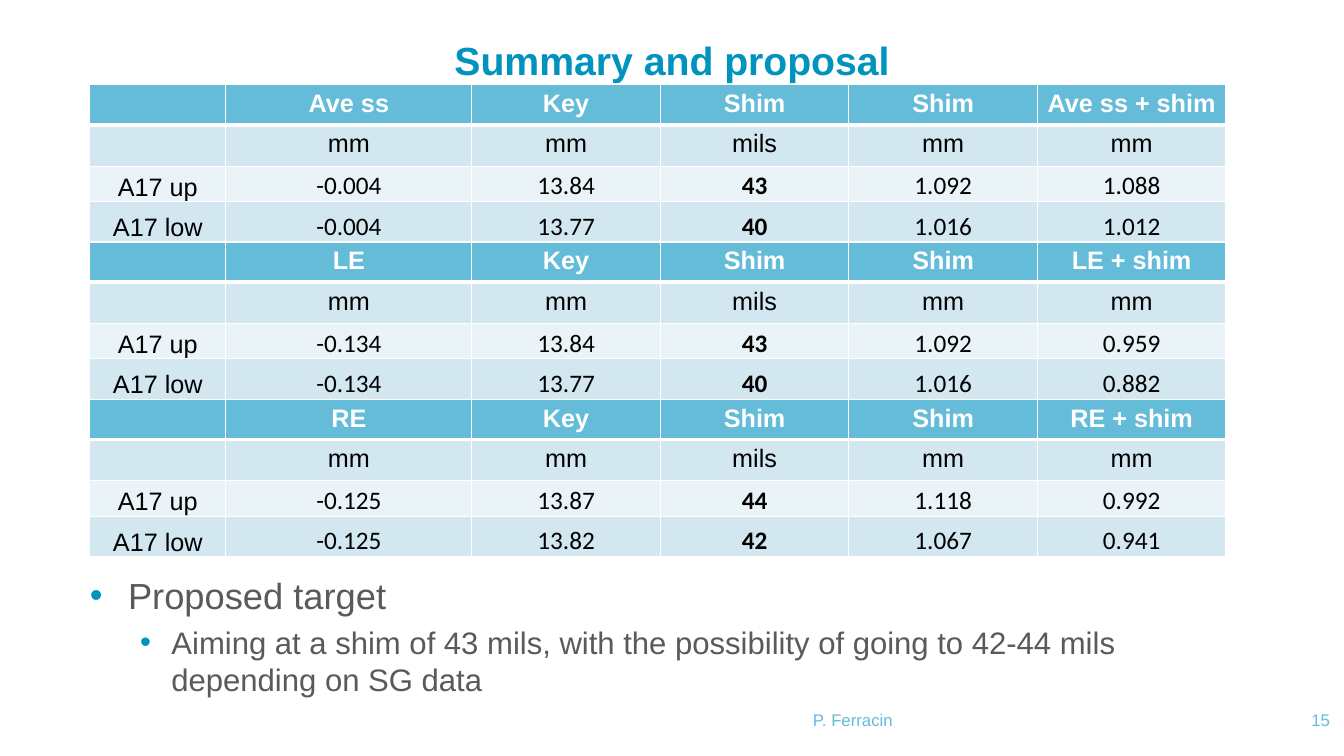
from lxml.etree import SubElement
from pptx import Presentation
from pptx.dml.color import RGBColor
from pptx.enum.text import MSO_ANCHOR, PP_ALIGN
from pptx.oxml.ns import qn
from pptx.util import Inches, Pt

BLUE, LIGHT_BLUE, GREY = "0093BE", "64BCD9", "5A5A5A"
BAND, PALE_BAND, WHITE, BLACK = "D3E7F1", "EAF3F8", "FFFFFF", "000000"


def color(hex_value):
    return RGBColor.from_string(hex_value)


def add_text(box, lines, size, hex_value, align, anchor, bold=False):
    """Add a text box without margins, one paragraph per line."""
    shape = slide.shapes.add_textbox(*[Inches(value) for value in box])
    frame = shape.text_frame
    frame.word_wrap = True
    frame.vertical_anchor = anchor
    frame.margin_left = frame.margin_right = frame.margin_top = frame.margin_bottom = 0
    frame.text = "\n".join(lines)
    for paragraph in frame.paragraphs:
        paragraph.alignment = align
        for run in paragraph.runs:
            run.font.name, run.font.size, run.font.bold = "Arial", Pt(size), bold
            run.font.color.rgb = color(hex_value)
    return frame


presentation = Presentation()
presentation.slide_width, presentation.slide_height = Inches(13.33), Inches(7.5)
slide = presentation.slides.add_slide(presentation.slide_layouts[6])

# Title
add_text((0.89, 0.2, 11.55, 0.79), ["Summary and proposal"], 28, BLUE,
         PP_ALIGN.CENTER, MSO_ANCHOR.MIDDLE, bold=True)

# Proposed target, two bullet levels
target = add_text(
    (0.89, 5.64, 11.55, 1.12),
    ["Proposed target",
     "Aiming at a shim of 43 mils, with the possibility of going to 42-44 mils "
     "depending on SG data"],
    25.9, GREY, PP_ALIGN.LEFT, MSO_ANCHOR.TOP)
target.margin_top = Inches(0.05)
for paragraph, indent, hanging in zip(target.paragraphs, (0.38, 0.81), (0.38, 0.31)):
    properties = paragraph._p.get_or_add_pPr()
    properties.set("marL", str(Inches(indent)))
    properties.set("indent", str(-Inches(hanging)))
    bullet_color = SubElement(properties, qn("a:buClr"))
    SubElement(bullet_color, qn("a:srgbClr"), val=BLUE)
    SubElement(properties, qn("a:buFont"), typeface="Arial")
    SubElement(properties, qn("a:buChar"), char="•")
detail = target.paragraphs[1]
detail.level = 1
detail.space_before = Pt(4.4)
detail.runs[0].font.size = Pt(22.2)

# Footer and slide number
add_text((4.48, 6.85, 7.96, 0.39), ["P. Ferracin"], 12, LIGHT_BLUE,
         PP_ALIGN.CENTER, MSO_ANCHOR.BOTTOM)
add_text((12.67, 6.85, 0.52, 0.39), ["15"], 12, LIGHT_BLUE,
         PP_ALIGN.RIGHT, MSO_ANCHOR.BOTTOM)

# Shim tables: quantity, then the values for A17 up and A17 low
measurements = [
    ("Ave ss", ["-0.004", "13.84", "43", "1.092", "1.088"],
     ["-0.004", "13.77", "40", "1.016", "1.012"]),
    ("LE", ["-0.134", "13.84", "43", "1.092", "0.959"],
     ["-0.134", "13.77", "40", "1.016", "0.882"]),
    ("RE", ["-0.125", "13.87", "44", "1.118", "0.992"],
     ["-0.125", "13.82", "42", "1.067", "0.941"]),
]
column_widths = [1.35, 2.44, 1.87, 1.87, 1.87, 1.87]
row_heights = [0.4, 0.41, 0.35, 0.4]
row_fills = [LIGHT_BLUE, BAND, PALE_BAND, BAND]
table_height = sum(row_heights)
SHIM_COLUMN = 3

for index, (quantity, upper, lower) in enumerate(measurements):
    rows = [
        ["", quantity, "Key", "Shim", "Shim", f"{quantity} + shim"],
        ["", "mm", "mm", "mils", "mm", "mm"],
        ["A17 up", *upper],
        ["A17 low", *lower],
    ]
    table = slide.shapes.add_table(
        len(rows), len(column_widths), Inches(0.89), Inches(0.84 + index * table_height),
        Inches(sum(column_widths)), Inches(table_height)).table
    table.first_row = table.horz_banding = False
    for column, width in zip(table.columns, column_widths):
        column.width = Inches(width)
    for row_index, values in enumerate(rows):
        table.rows[row_index].height = Inches(row_heights[row_index])
        is_header, is_data = row_index == 0, row_index >= 2
        for column_index, value in enumerate(values):
            cell = table.cell(row_index, column_index)
            # White grid, thicker under the header
            thick_side = {0: "lnB", 1: "lnT"}.get(row_index)
            for side in ("lnL", "lnR", "lnT", "lnB"):
                border = SubElement(cell._tc.get_or_add_tcPr(), qn(f"a:{side}"),
                                    w=str(Pt(3 if side == thick_side else 1)))
                SubElement(SubElement(border, qn("a:solidFill")), qn("a:srgbClr"), val=WHITE)
            cell.fill.solid()
            cell.fill.fore_color.rgb = color(row_fills[row_index])
            if is_data:
                cell.vertical_anchor = MSO_ANCHOR.BOTTOM
                cell.margin_left = cell.margin_right = cell.margin_top = Inches(0.01)
                cell.margin_bottom = 0
            # Cell text
            cell.text_frame.text = value
            paragraph = cell.text_frame.paragraphs[0]
            paragraph.alignment = PP_ALIGN.CENTER
            for run in paragraph.runs:
                run.font.size = Pt(18)
                run.font.name = "Calibri" if is_data and column_index else "Arial"
                run.font.bold = is_header or (is_data and column_index == SHIM_COLUMN)
                run.font.color.rgb = color(WHITE if is_header else BLACK)

presentation.save("out.pptx")
